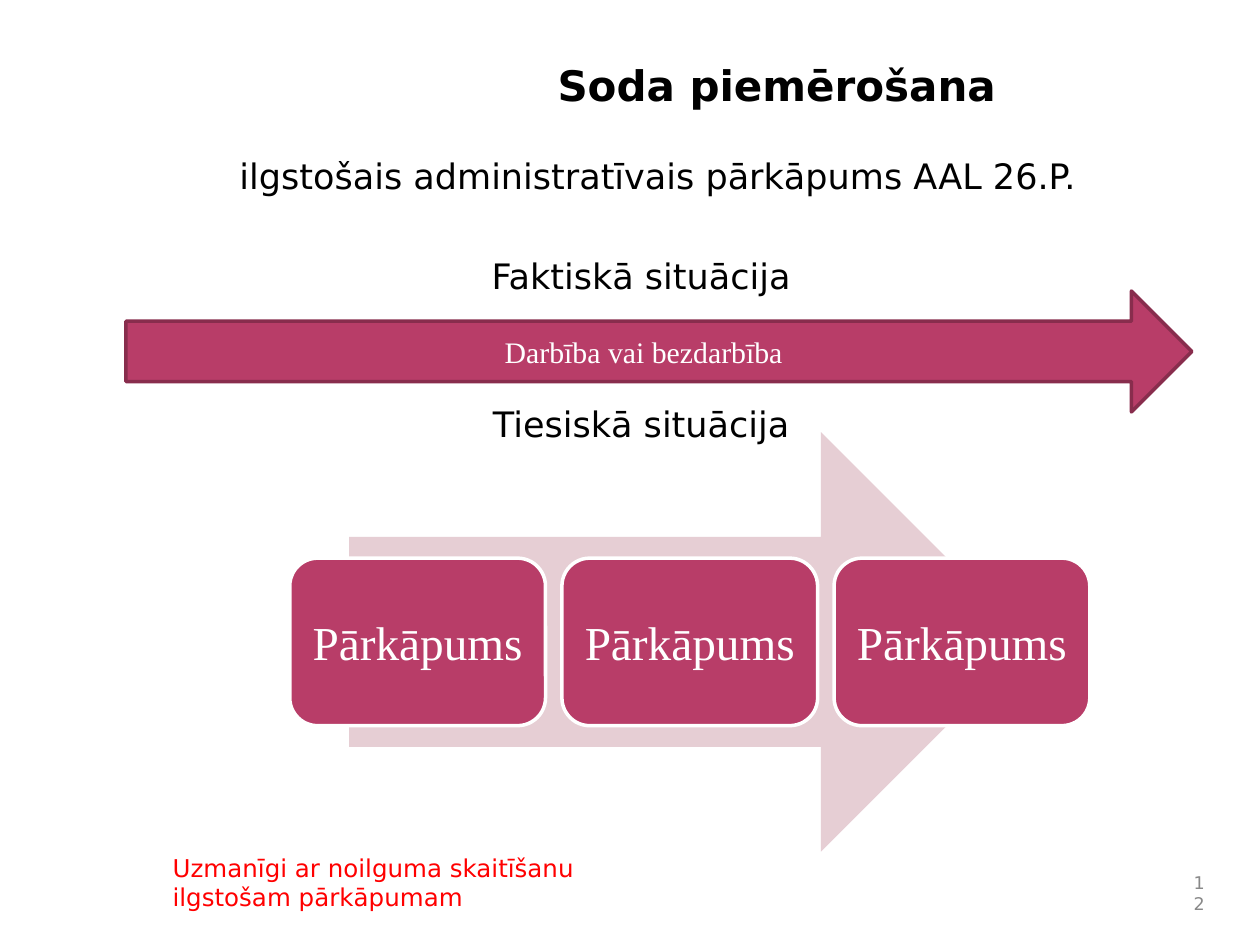
"""Build the slide on applying a penalty to a continuing offence."""
import lxml.etree
import pptx
import pptx.dml.color
import pptx.enum.shapes
import pptx.enum.text
import pptx.oxml.ns
import pptx.util

Inches = pptx.util.Inches
Pt = pptx.util.Pt
ALIGN = pptx.enum.text.PP_ALIGN
ANCHOR = pptx.enum.text.MSO_ANCHOR
SHAPE = pptx.enum.shapes.MSO_SHAPE

SANS = "DejaVu Sans"
SERIF = "Times New Roman"
BERRY = "B83D68"


def color(value):
    """Turn a hex string into a colour."""
    return pptx.dml.color.RGBColor.from_string(value)


def set_all(target, values):
    """Set every attribute named in a dict."""
    for name, value in values.items():
        setattr(target, name, value)


class PenaltySlide:
    """Hold the style and the current slide."""

    frame_format = {"word_wrap": True, "auto_size": pptx.enum.text.MSO_AUTO_SIZE.NONE,
                    "margin_left": Inches(0.1), "margin_right": Inches(0.1),
                    "margin_top": Inches(0.05), "margin_bottom": Inches(0.05)}

    def __init__(self, deck):
        """Add a slide with a title and two body placeholders."""
        self.slide = deck.slides.add_slide(deck.slide_layouts[3])

    def fill_text(self, holder, lines, size, ink, font=SANS, bold=False,
                  align=ALIGN.CENTER, anchor=ANCHOR.TOP):
        """Fill in lines given as (text, space before, left indent) in points."""
        frame = holder.text_frame
        set_all(frame, {**self.frame_format, "vertical_anchor": anchor})
        for number, (text, gap, indent) in enumerate(lines):
            paragraph = frame.add_paragraph() if number else frame.paragraphs[0]
            properties = paragraph._p.get_or_add_pPr()
            properties.set("marL", str(Pt(indent)))
            properties.set("indent", "0")
            lxml.etree.SubElement(properties, pptx.oxml.ns.qn("a:buNone"))
            set_all(paragraph, {"alignment": align, "space_before": Pt(gap)})
            run = paragraph.add_run()
            run.text = text
            set_all(run.font, {"name": font, "size": Pt(size), "bold": bold})
            run.font.color.rgb = color(ink)

    def placeholder(self, index, box, lines, size, ink, **style):
        """Move a placeholder and fill it."""
        holder = self.slide.placeholders[index]
        set_all(holder, dict(zip(("left", "top", "width", "height"), map(Inches, box))))
        self.fill_text(holder, lines, size, ink, **style)

    def label(self, box, text, size, ink, **style):
        """Add a text box."""
        holder = self.slide.shapes.add_textbox(*map(Inches, box))
        self.fill_text(holder, [(text, 0, 0)], size, ink, **style)

    def block(self, kind, box, fill, line=None, text=None, size=17):
        """Add a filled preset shape."""
        shape = self.slide.shapes.add_shape(kind, *map(Inches, box))
        shape.shadow.inherit = False
        shape.fill.solid()
        shape.fill.fore_color.rgb = color(fill)
        if line:
            shape.line.color.rgb = color(line)
            shape.line.width = Pt(2)
        else:
            shape.line.fill.background()
        if text:
            self.fill_text(shape, [(text, 0, 0)], size, "FFFFFF", font=SERIF,
                           anchor=ANCHOR.MIDDLE)


def main():
    """Build and save the deck."""
    deck = pptx.Presentation()
    set_all(deck, {"slide_width": Inches(10), "slide_height": Inches(7.5)})
    page = PenaltySlide(deck)

    page.placeholder(0, (2.83, 0.42, 6.67, 1.13), [("Soda piemērošana", 0, 0)],
                     24, "000000", bold=True)
    situations = [("ilgstošais administratīvais pārkāpums AAL 26.P.", 0, 19),
                  ("Faktiskā situācija", 32.7, 0),
                  ("Tiesiskā situācija", 60.7, 0)]
    page.placeholder(1, (0.78, 1.18, 8.62, 4.78), situations, 20, "000000")
    warning = "Uzmanīgi ar noilguma skaitīšanu ilgstošam pārkāpumam"
    page.placeholder(2, (1.27, 6.72, 3.73, 0.53), [(warning, 0, 0)],
                     14, "FF0000", align=ALIGN.LEFT)
    page.label((9.33, 6.92, 0.33, 0.33), "12", 10, "898989",
               align=ALIGN.RIGHT, anchor=ANCHOR.MIDDLE)

    page.block(SHAPE.RIGHT_ARROW, (1, 2.31, 8.46, 0.96), BERRY, "882D4D",
               "Darbība vai bezdarbība")
    page.block(SHAPE.RIGHT_ARROW, (2.77, 3.43, 5.41, 3.33), "E6CED4")
    gap = 0.13
    width = 2.03
    for step in range(3):
        left = 2.3 + (width + gap) * step
        page.block(SHAPE.ROUNDED_RECTANGLE, (left, 4.43, width, 1.33),
                   BERRY, "FFFFFF", "Pārkāpums", 27)

    deck.save("out.pptx")


if __name__ == "__main__":
    main()
